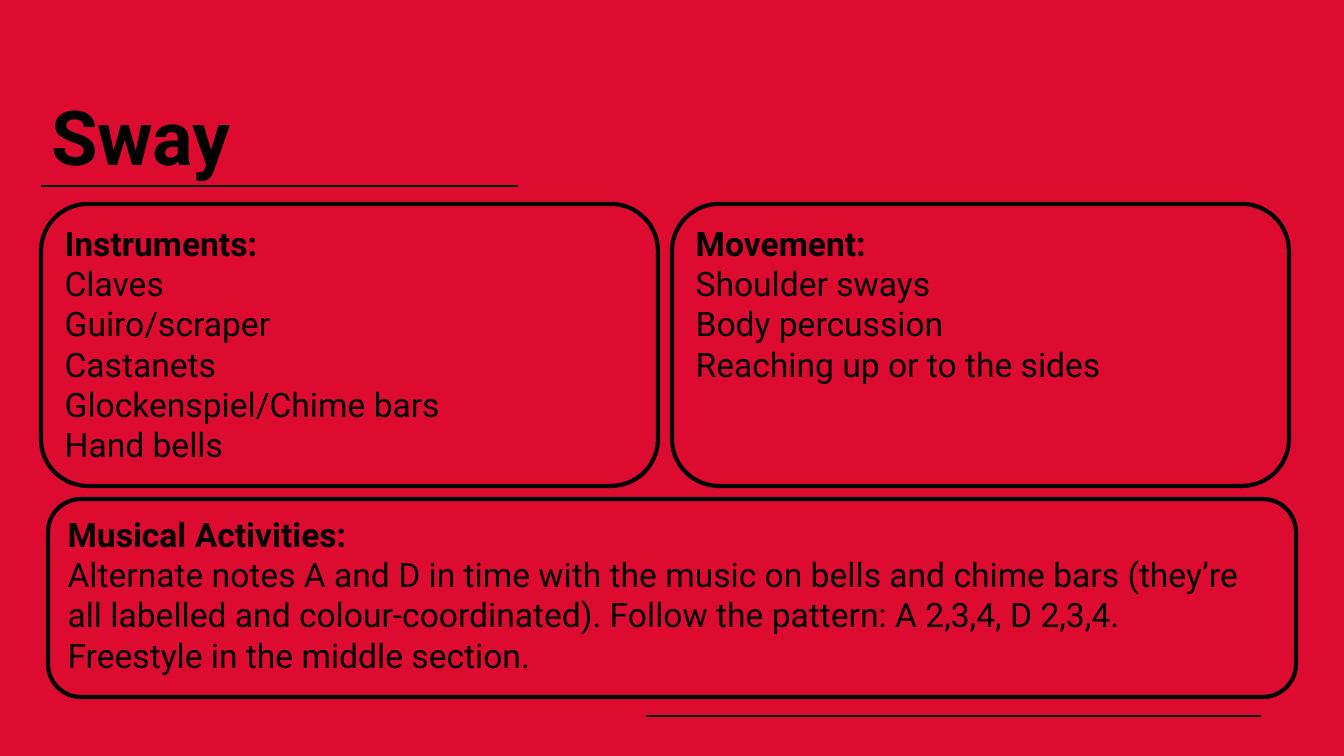
from lxml import etree
from pptx import Presentation
from pptx.dml.color import RGBColor
from pptx.enum.shapes import MSO_CONNECTOR, MSO_SHAPE
from pptx.enum.text import MSO_ANCHOR, PP_ALIGN
from pptx.oxml.ns import qn
from pptx.util import Pt

EMU_PER_PX = 914400 / 100.8
STRAIGHT = MSO_CONNECTOR.STRAIGHT
ROUNDED = MSO_SHAPE.ROUNDED_RECTANGLE
TOP, MIDDLE = MSO_ANCHOR.TOP, MSO_ANCHOR.MIDDLE
LEFT = PP_ALIGN.LEFT
TITLE_ONLY = 5
FONT = "Roboto"
BLACK, RED = "000000", "DD0B2F"

INSTRUMENTS = ["Instruments:", "Claves", "Guiro/scraper", "Castanets",
               "Glockenspiel/Chime bars", "Hand bells"]
MOVEMENT = ["Movement:", "Shoulder sways", "Body percussion",
            "Reaching up or to the sides"]
ACTIVITIES = [
    "Musical Activities:",
    "Alternate notes A and D in time with the music on bells and chime bars "
    "(they’re all labelled and colour-coordinated). Follow the pattern: "
    "A 2,3,4, D 2,3,4.",
    "Freestyle in the middle section.",
]


def px(length):
    """Turn a length in px into EMU."""
    return round(length * EMU_PER_PX)


def color(value):
    """Turn a hex string into a colour."""
    return RGBColor.from_string(value)


def format_paragraph(paragraph, size, bold):
    """Left-align a paragraph and format its runs."""
    paragraph.alignment = LEFT
    for run in paragraph.runs:
        run.font.name = FONT
        run.font.size = Pt(size)
        run.font.bold = bold
        run.font.color.rgb = color(BLACK)


def add_rule(slide, left, top, width):
    """Draw a thin horizontal rule."""
    rule = slide.shapes.add_connector(
        STRAIGHT, px(left), px(top), px(left + width), px(top))
    rule.line.color.rgb = color(BLACK)
    rule.line.width = Pt(1)
    etree.SubElement(rule._element.spPr, qn("a:effectLst"))


def add_title(slide, left, top, width, height, text):
    """Place and format the slide title."""
    title = slide.shapes.title
    title.left, title.top = px(left), px(top)
    title.width, title.height = px(width), px(height)
    frame = title.text_frame
    frame.text = text
    frame.word_wrap = True
    frame.vertical_anchor = MIDDLE
    frame.paragraphs[0].line_spacing = 0.9
    format_paragraph(frame.paragraphs[0], 54, True)


def add_card(slide, left, top, width, height, lines):
    """Draw an outlined card with a bold heading over its lines."""
    card = slide.shapes.add_shape(
        ROUNDED, px(left), px(top), px(width), px(height))
    card.shadow.inherit = False
    card.fill.background()
    card.line.color.rgb = color(BLACK)
    card.line.width = Pt(3)
    frame = card.text_frame
    frame.word_wrap = True
    frame.vertical_anchor = TOP
    frame.text = "\n".join(lines)
    for index, paragraph in enumerate(frame.paragraphs):
        format_paragraph(paragraph, 24, index == 0)


def add_song_slide(presentation):
    """Build the song slide with its title, rules and cards."""
    slide = presentation.slides.add_slide(
        presentation.slide_layouts[TITLE_ONLY])
    slide.background.fill.solid()
    slide.background.fill.fore_color.rgb = color(RED)
    add_rule(slide, 646, 716, 615)
    add_rule(slide, 41, 186, 477)
    add_title(slide, 41, 78, 749, 127, "Sway")
    add_card(slide, 48, 499, 1248, 198, ACTIVITIES)
    card_left, card_width, gap = 41, 617, 14
    for column, lines in enumerate([INSTRUMENTS, MOVEMENT]):
        left = card_left + column * (card_width + gap)
        add_card(slide, left, 204, card_width, 282, lines)


def main():
    """Create and save the presentation."""
    presentation = Presentation()
    presentation.slide_width = px(1344)
    presentation.slide_height = px(756)
    add_song_slide(presentation)
    presentation.save("out.pptx")


if __name__ == "__main__":
    main()
